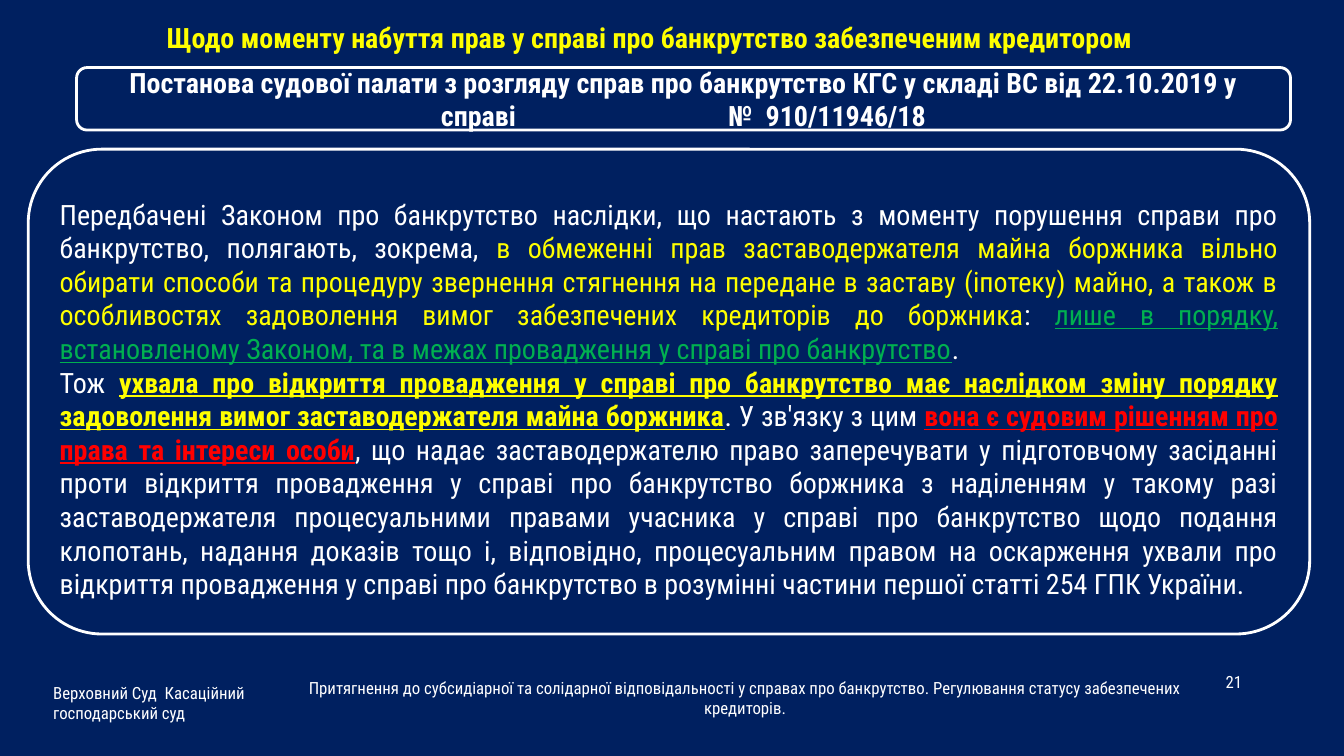
from lxml import etree
from pptx import Presentation
from pptx.dml.color import RGBColor
from pptx.enum.shapes import MSO_SHAPE
from pptx.enum.text import MSO_ANCHOR, MSO_AUTO_SIZE, PP_ALIGN
from pptx.oxml.ns import qn
from pptx.util import Inches, Pt

NAVY = RGBColor(0x00, 0x20, 0x60)
WHITE = RGBColor(0xFF, 0xFF, 0xFF)
YELLOW = RGBColor(0xFF, 0xFF, 0x00)
GREEN = RGBColor(0x00, 0xB0, 0x50)
RED = RGBColor(0xFF, 0x00, 0x00)
FONT = "Roboto Condensed"


def add_paragraph(p, align, size, runs):
    """Fill p with runs given as (text, colour, bold, underline)."""
    p.alignment = align
    for text, color, bold, underline in runs:
        r = p.add_run()
        r.text = text
        r.font.color.rgb = color
        formats = {"name": FONT, "size": Pt(size), "bold": bold, "underline": underline}
        for name, value in formats.items():
            setattr(r.font, name, value)


def add_frame(left, top, width, height, radius):
    sp = s.shapes.add_shape(MSO_SHAPE.ROUNDED_RECTANGLE, Inches(left), Inches(top),
                            Inches(width), Inches(height))
    sp.adjustments[0] = radius
    sp.shadow.inherit = False
    sp.fill.solid()
    sp.fill.fore_color.rgb = NAVY
    sp.line.color.rgb = WHITE
    sp.line.width = Pt(2)
    sp.text_frame.vertical_anchor = MSO_ANCHOR.MIDDLE
    return sp.text_frame


prs = Presentation()
prs.slide_width, prs.slide_height = Inches(13.33), Inches(7.5)
s = prs.slides.add_slide(prs.slide_layouts[5])
s.background.fill.solid()
s.background.fill.fore_color.rgb = NAVY

# Title
title = s.shapes.title
title.left, title.top = Inches(0.28), Inches(0.15)
title.width, title.height = Inches(12.33), Inches(0.44)
tf = title.text_frame
tf.auto_size = MSO_AUTO_SIZE.NONE
tf.vertical_anchor = MSO_ANCHOR.TOP
add_paragraph(tf.paragraphs[0], PP_ALIGN.CENTER, 20, [
    ("Щодо моменту набуття прав у справі про банкрутство забезпеченим кредитором",
     YELLOW, True, False)])

# Ruling, with a tab stop before the case number
p = add_frame(0.76, 0.67, 12.04, 0.62, 0.167).paragraphs[0]
add_paragraph(p, PP_ALIGN.CENTER, 20, [
    ("Постанова судової палати з розгляду справ про банкрутство КГС у складі ВС "
     "від 22.10.2019 у справі\t№  910/11946/18", WHITE, True, False)])
tabs = etree.SubElement(p._p.get_or_add_pPr(), qn("a:tabLst"))
etree.SubElement(tabs, qn("a:tab"), pos=str(Inches(2.85)), algn="l")

# Legal position
position = [
    [("Передбачені Законом про банкрутство наслідки, що настають з моменту порушення "
      "справи про банкрутство, полягають, зокрема, ", WHITE, False, False),
     ("в обмеженні прав заставодержателя майна боржника вільно обирати способи та "
      "процедуру звернення стягнення на передане в заставу (іпотеку) майно, а також в "
      "особливостях задоволення вимог забезпечених кредиторів до боржника",
      YELLOW, False, False),
     (": ", WHITE, False, False),
     ("лише в порядку, встановленому Законом, та в межах провадження у справі про "
      "банкрутство", GREEN, False, True),
     (".", WHITE, False, False)],
    [("Тож ", WHITE, False, False),
     ("ухвала про відкриття провадження у справі про банкрутство має наслідком зміну "
      "порядку задоволення вимог заставодержателя майна боржника", YELLOW, True, True),
     (". У зв'язку з цим ", WHITE, False, False),
     ("вона є судовим рішенням про права та інтереси особи", RED, True, True),
     (", що надає заставодержателю право заперечувати у підготовчому засіданні проти "
      "відкриття провадження у справі про банкрутство боржника з наділенням у такому "
      "разі заставодержателя процесуальними правами учасника у справі про банкрутство "
      "щодо подання клопотань, надання доказів тощо і, відповідно, процесуальним правом "
      "на оскарження ухвали про відкриття провадження у справі про банкрутство в "
      "розумінні частини першої статті 254 ГПК України.", WHITE, False, False)],
]
tf = add_frame(0.28, 1.48, 12.71, 4.81, 0.152)
tf.margin_top = Inches(0.19)
for i, runs in enumerate(position):
    p = tf.add_paragraph() if i else tf.paragraphs[0]
    add_paragraph(p, PP_ALIGN.JUSTIFY, 20, runs)

# Footer
footer = [
    (0.43, 6.6, 2.54, 0.75, PP_ALIGN.LEFT, "Верховний Суд  Касаційний господарський суд"),
    (2.64, 6.7, 9.5, 0.45, PP_ALIGN.CENTER,
     "Притягнення до субсидіарної та солідарної відповідальності у справах про "
     "банкрутство. Регулювання статусу забезпечених кредиторів."),
    (9.42, 6.6, 3, 0.33, PP_ALIGN.RIGHT, "21"),
]
for left, top, width, height, align, text in footer:
    tf = s.shapes.add_textbox(Inches(left), Inches(top),
                              Inches(width), Inches(height)).text_frame
    tf.word_wrap = True
    tf.vertical_anchor = MSO_ANCHOR.MIDDLE
    add_paragraph(tf.paragraphs[0], align, 12, [(text, WHITE, False, False)])

prs.save("out.pptx")
